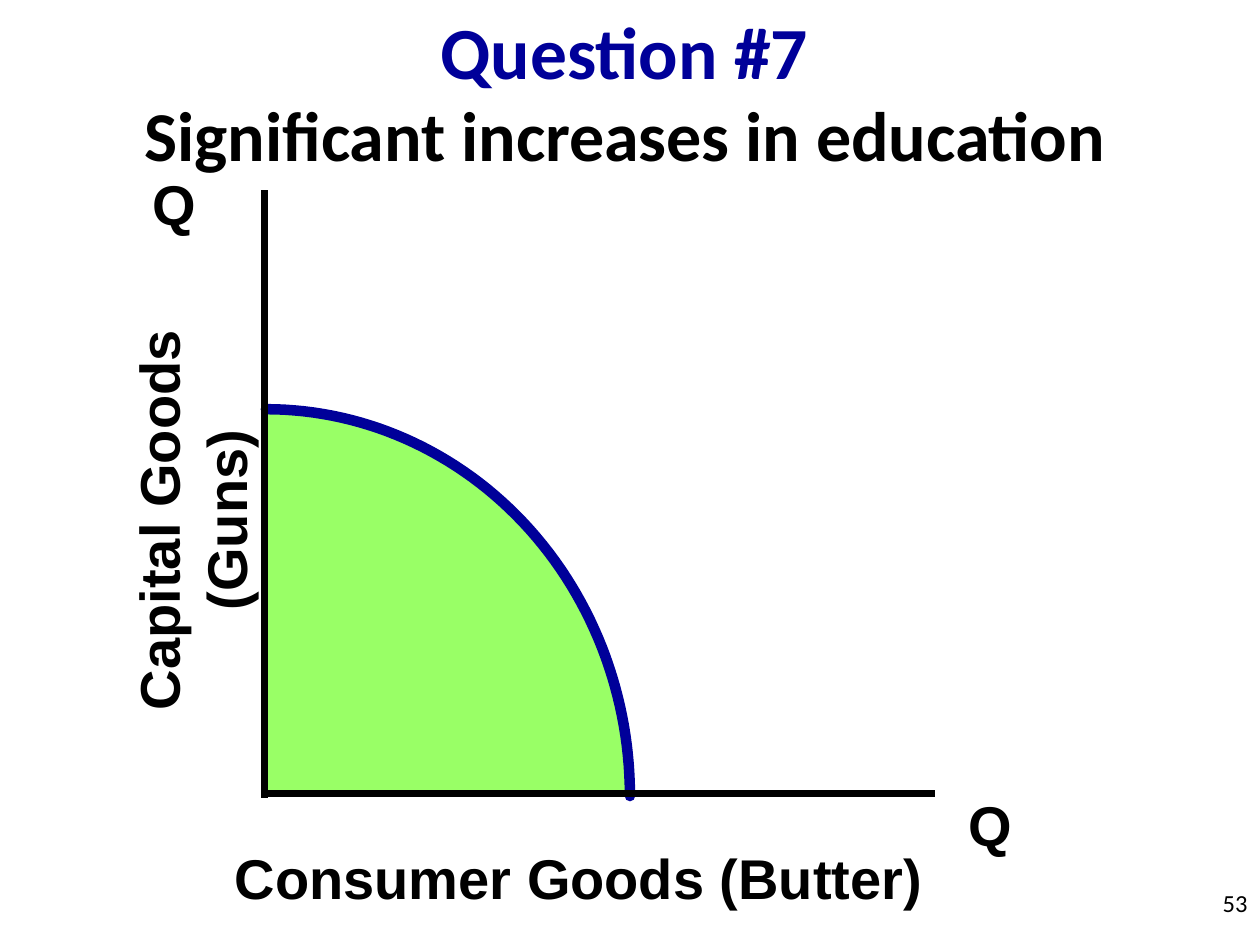
from math import cos, pi, sin

from pptx import Presentation
from pptx.dml.color import RGBColor
from pptx.enum.shapes import MSO_CONNECTOR as Connector
from pptx.enum.text import MSO_ANCHOR as Anchor, MSO_AUTO_SIZE as AutoSize, PP_ALIGN as Align
from pptx.oxml.ns import qn
from pptx.util import Cm, Pt
from lxml.etree import SubElement

BLACK, NAVY, GREEN = "000000", "000099", "99FF66"


def color(hex_string):
    return RGBColor.from_string(hex_string)


class GraphSlide:
    """Holds the style and the current slide."""

    label = {"name": "Arial", "size": Pt(32), "bold": True}
    heading = {"name": "Calibri", "size": Pt(42), "bold": True}
    subheading = {"name": "Calibri", "size": Pt(40), "bold": True}
    number = {"name": "Calibri", "size": Pt(14), "bold": False}

    def __init__(self, presentation):
        self.slide = presentation.slides.add_slide(presentation.slide_layouts[1])
        self.shapes = self.slide.shapes

    def set_text(self, shape, text, style, ink=BLACK, align=Align.CENTER, wrap=True):
        frame = shape.text_frame
        frame.text = text
        frame.word_wrap = wrap
        frame.auto_size = AutoSize.NONE
        frame.vertical_anchor = Anchor.TOP
        paragraph = frame.paragraphs[0]
        paragraph.alignment = align
        for run in paragraph.runs:
            for name, value in style.items():
                setattr(run.font, name, value)
            run.font.color.rgb = color(ink)
        return paragraph

    def placeholder(self, index, box, text, style, ink=BLACK):
        shape = self.slide.placeholders[index]
        shape.left, shape.top, shape.width, shape.height = map(Cm, box)
        return self.set_text(shape, text, style, ink)

    def textbox(self, box, text, style, align=Align.CENTER, wrap=False, rotation=0):
        shape = self.shapes.add_textbox(*map(Cm, box))
        shape.rotation = rotation
        self.set_text(shape, text, style, align=align, wrap=wrap)

    def axis(self, start, end):
        line = self.shapes.add_connector(Connector.STRAIGHT, *map(Cm, start + end))
        line.line.color.rgb = color(BLACK)
        line.line.width = Pt(4)
        SubElement(line._element.spPr, qn("a:effectLst"))

    def outline(self, points, close):
        points = [(Cm(x), Cm(y)) for x, y in points]
        builder = self.shapes.build_freeform(*points[0])
        builder.add_line_segments(points[1:], close=close)
        shape = builder.convert_to_shape()
        shape.shadow.inherit = False
        return shape

    def frontier(self, center, radii, steps=60):
        (x, y), (width, height) = center, radii
        angles = [pi / 2 * step / steps for step in range(steps + 1)]
        arc = [(x + width * sin(angle), y - height * cos(angle)) for angle in angles]

        area = self.outline(arc + [center], close=True)
        area.fill.solid()
        area.fill.fore_color.rgb = color(GREEN)
        area.line.fill.background()

        curve = self.outline(arc, close=False)
        curve.fill.background()
        curve.line.color.rgb = color(NAVY)
        curve.line.width = Pt(6)
        line = curve._element.spPr.find(qn("a:ln"))
        line.set("cap", "rnd")
        SubElement(line, qn("a:round"))


def main():
    presentation = Presentation()
    presentation.slide_width, presentation.slide_height = Cm(25.4), Cm(19.05)
    graph = GraphSlide(presentation)

    # Headings
    graph.placeholder(0, (2.74, 0, 19.69, 2.03), "Question #7", graph.heading, NAVY)
    topic = graph.placeholder(1, (1.07, 1.9, 23.06, 3.63),
                              "Significant increases in education", graph.subheading)
    topic.line_spacing = 0.9
    properties = topic._p.get_or_add_pPr()
    for name in ("marL", "indent"):
        properties.set(name, "0")
    SubElement(properties, qn("a:buNone"))

    # Production possibilities frontier, then the axes over it
    graph.frontier(center=(5.36, 16.05), radii=(7.34, 7.8))
    graph.axis((5.33, 3.84), (5.33, 16.08))
    graph.axis((5.31, 16), (18.85, 16))

    # Axis labels
    for left, top in ((2.82, 3.3), (19.28, 15.82)):
        graph.textbox((left, top, 1.37, 1.6), "Q", graph.label, Align.LEFT)
    graph.textbox((-0.24, 9.05, 8.1, 2.87), "Capital Goods\v(Guns)", graph.label, rotation=270)
    graph.textbox((4.34, 16.87, 14.66, 1.6), "Consumer Goods (Butter)", graph.label)

    # Slide number
    graph.textbox((20.12, 17.78, 5.28, 1.27), "53", graph.number, Align.RIGHT, wrap=True)

    presentation.save("out.pptx")


if __name__ == "__main__":
    main()
